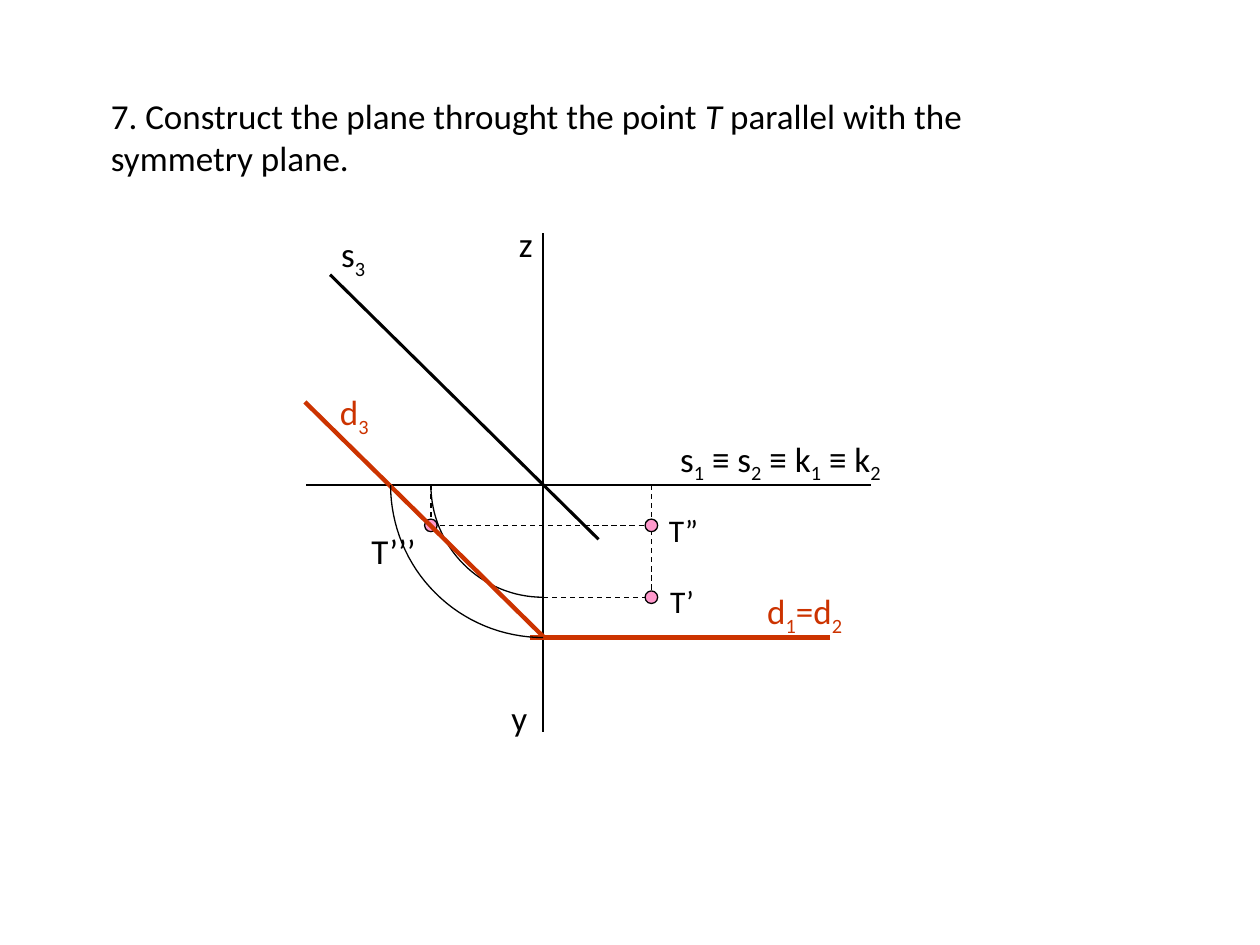
from itertools import groupby
from math import cos, pi, sin

from pptx import Presentation
from pptx.dml.color import RGBColor
from pptx.enum.dml import MSO_LINE_DASH_STYLE as Dash
from pptx.enum.shapes import MSO_CONNECTOR as Connector, MSO_SHAPE as Shape
from pptx.enum.text import MSO_ANCHOR as Anchor, MSO_AUTO_SIZE as AutoSize, PP_ALIGN as Align
from pptx.oxml.ns import qn
from pptx.util import Inches, Pt

COLORS = {"ink": "000000", "plane": "CC3300", "point": "FF99CC"}
FONT = "Calibri"
DOT = 0.1
ARC_STEPS = 32


def color(name):
    return RGBColor.from_string(COLORS[name])


def style_font(font, size, ink="ink"):
    font.name, font.size = FONT, Pt(size)
    font.color.rgb = color(ink)


def add_task(slide, left, top, width, height):
    title = slide.shapes.title
    title.left, title.top, title.width, title.height = map(Inches, (left, top, width, height))
    frame = title.text_frame
    frame.auto_size, frame.vertical_anchor = AutoSize.NONE, Anchor.TOP
    task = frame.paragraphs[0]
    task.alignment = Align.LEFT
    style_font(task.font, 20)
    for words, italic in (("7. Construct the plane throught the point ", False), ("T ", True),
                          ("parallel with the symmetry plane.", False)):
        run = task.add_run()
        run.text, run.font.italic = words, italic


class Drawing:
    """Draws in inches measured right and down from the origin of the axes."""

    def __init__(self, slide, x, y):
        self.shapes, self.x, self.y = slide.shapes, x, y

    def place(self, x, y):
        return Inches(self.x + x), Inches(self.y + y)

    def line(self, start, end, weight=0.75, ink="ink", dashed=False):
        segment = self.shapes.add_connector(Connector.STRAIGHT, *self.place(*start), *self.place(*end))
        segment.line.color.rgb, segment.line.width = color(ink), Pt(weight)
        if dashed:
            segment.line.dash_style = Dash.DASH
        properties = segment._element.spPr
        properties.append(properties.makeelement(qn("a:effectLst"), {}))

    def label(self, text, x, y, width, height=0.44, size=20, ink="ink"):
        """Writes a name whose digits are subscripts."""
        box = self.shapes.add_textbox(*self.place(x, y), Inches(width), Inches(height))
        box.text_frame.word_wrap = True
        name = box.text_frame.paragraphs[0]
        style_font(name.font, size, ink)
        for is_index, letters in groupby(text, str.isdigit):
            run = name.add_run()
            run.text = "".join(letters)
            if is_index:
                run._r.get_or_add_rPr().set("baseline", "-25000")

    def point(self, x, y):
        dot = self.shapes.add_shape(Shape.OVAL, *self.place(x - DOT / 2, y - DOT / 2),
                                    Inches(DOT), Inches(DOT))
        dot.shadow.inherit = False
        dot.fill.solid()
        dot.fill.fore_color.rgb = color("point")
        dot.line.color.rgb, dot.line.width = color("ink"), Pt(0.75)

    def quarter_arc(self, radius):
        """Turns a distance on the y axis onto the horizontal axis."""
        angles = [pi / 2 * (1 + step / ARC_STEPS) for step in range(ARC_STEPS + 1)]
        start, *rest = [self.place(radius * cos(a), radius * sin(a)) for a in angles]
        builder = self.shapes.build_freeform(*start)
        builder.add_line_segments(rest, close=False)
        arc = builder.convert_to_shape()
        arc.shadow.inherit = False
        arc.fill.background()
        arc.line.color.rgb, arc.line.width = color("ink"), Pt(0.75)


def add_axes(drawing):
    drawing.line((-1.88, 0), (2.6, 0), 1.5)
    drawing.line((0, -2), (0, 1.96), 1)
    drawing.label("s1 ≡ s2 ≡ k1 ≡ k2", 0.99, -0.43, 1.96)
    drawing.label("z", -0.29, -2.13, 0.46)
    drawing.label("y", -0.35, 1.63, 0.54)


def add_symmetry_plane(drawing):
    drawing.line((-1.69, -1.67), (0.44, 0.43), 1.75)
    drawing.label("s3", -1.7, -2.05, 0.69)


def add_point_views(drawing, across, depth, drop):
    """Shows T in its three views, joined by dashed projection lines."""
    drawing.line((across, 0), (across, depth), dashed=True)
    drawing.line((-depth, drop), (across, drop), dashed=True)
    drawing.line((0, depth), (across, depth), dashed=True)
    drawing.line((-depth, 0), (-depth, drop), dashed=True)
    drawing.quarter_arc(depth)
    for x, y in ((across, drop), (across, depth), (-depth, drop)):
        drawing.point(x, y)
    drawing.label("T’", across + 0.05, depth - 0.17, 0.6, 0.4, size=18)
    drawing.label("T”", across + 0.04, drop - 0.16, 0.62, 0.4, size=18)
    drawing.label("T’’’", -depth - 0.57, drop - 0.02, 0.7)


def add_parallel_plane(drawing, depth):
    drawing.line((-1.89, -0.66), (0.01, depth), 2.5, "plane")
    drawing.label("d3", -1.71, -0.8, 0.47, ink="plane")
    drawing.line((-0.1, depth), (2.28, depth), 2.5, "plane")
    drawing.label("d1=d2", 1.68, depth - 0.43, 0.81, 0.66, ink="plane")
    drawing.quarter_arc(depth)


def main():
    deck = Presentation()
    deck.slide_width, deck.slide_height = Inches(10), Inches(7.5)
    slide = deck.slides.add_slide(deck.slide_layouts[5])
    add_task(slide, 0.78, 0.7, 8.12, 0.77)
    drawing = Drawing(slide, 4.31, 3.85)
    add_axes(drawing)
    add_symmetry_plane(drawing)
    add_point_views(drawing, across=0.86, depth=0.89, drop=0.32)
    add_parallel_plane(drawing, depth=1.21)
    deck.save("out.pptx")


if __name__ == "__main__":
    main()
